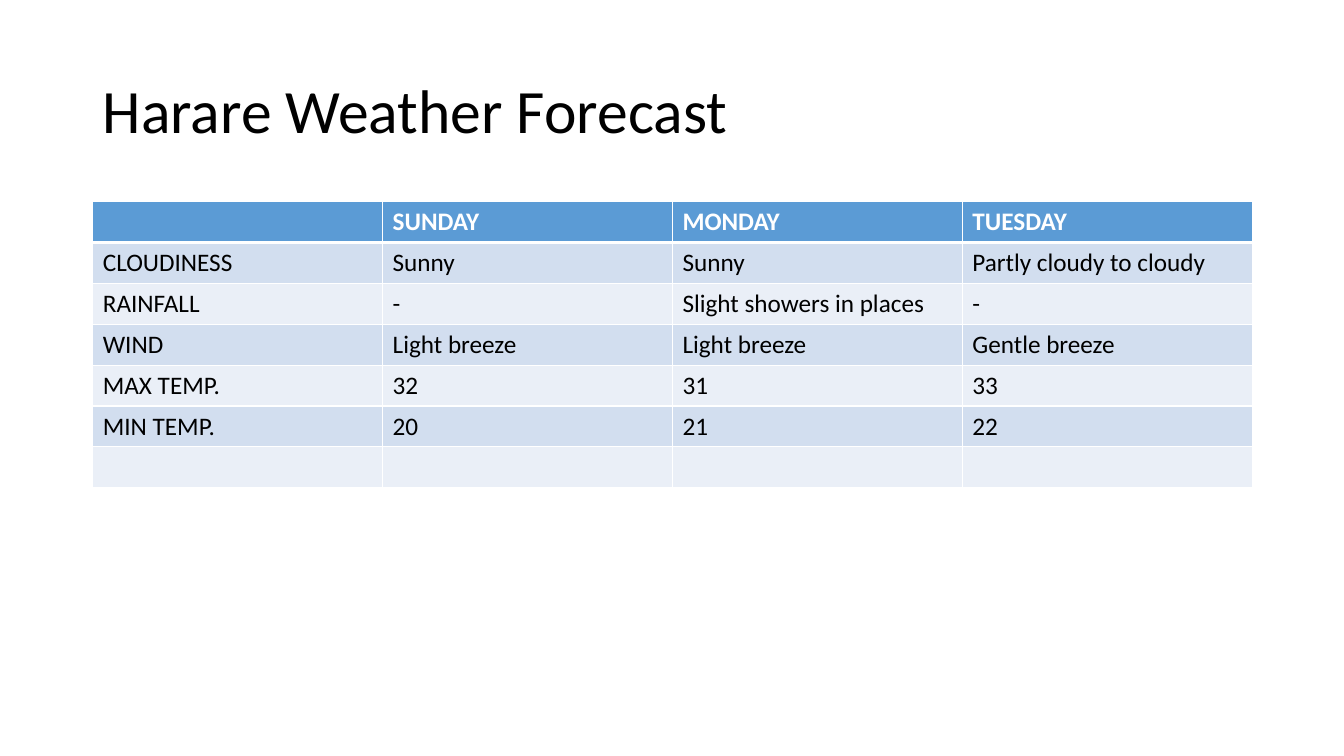
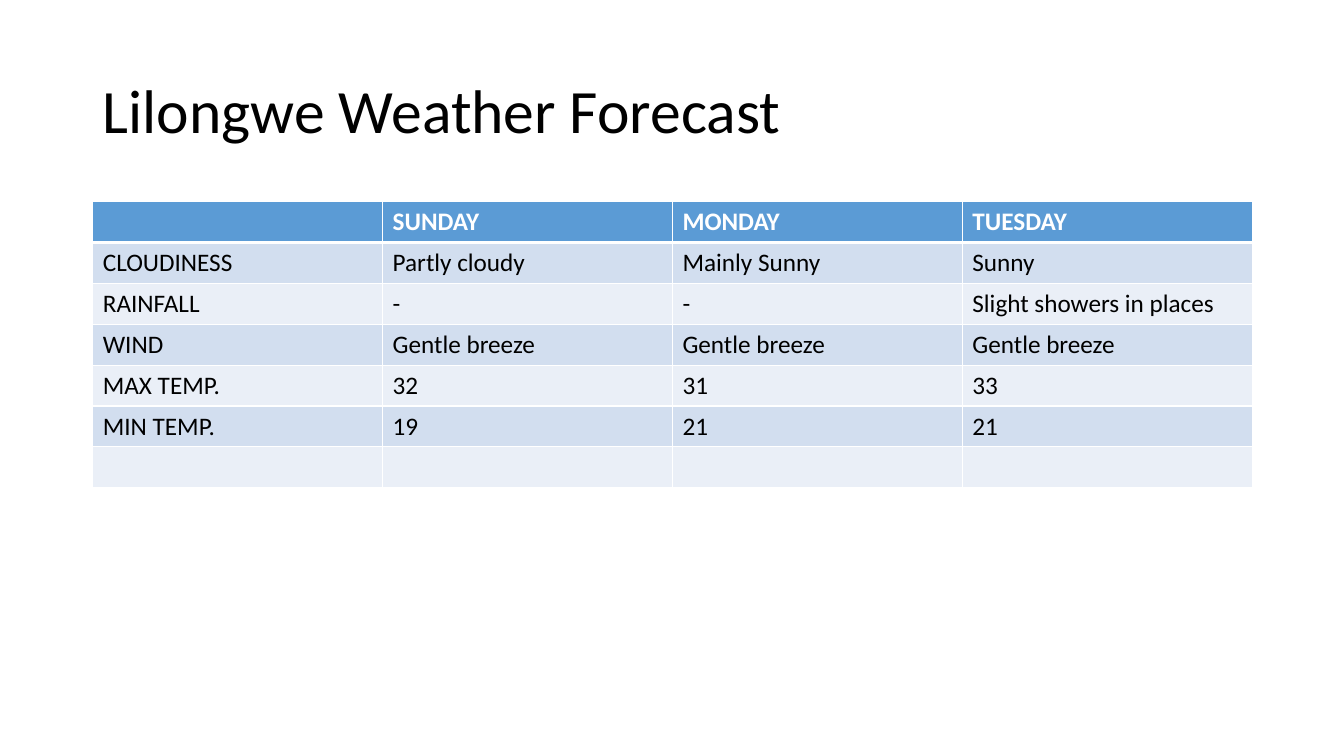
from dataclasses import dataclass

from lxml import etree
from pptx import Presentation
from pptx import util as u
from pptx.dml.color import RGBColor
from pptx.enum import text
from pptx.oxml import ns

PX = 9144  # EMU per px, 100 px to the inch
TITLE_ONLY = 5


@dataclass(frozen=True)
class Theme:
    font: str = "Calibri"
    title_size: int = 44
    table_size: int = 18
    ink: str = "000000"
    white: str = "FFFFFF"
    header: str = "5B9BD5"
    bands: tuple = ("D2DEEF", "EAEFF7")
    rule: int = 1
    header_rule: int = 3


def px(*lengths):
    return [u.Emu(length * PX) for length in lengths]


def write(frame, words, *, font, size, color, bold=False, spacing=None):
    paragraph = frame.paragraphs[0]
    paragraph.alignment = text.PP_ALIGN.LEFT
    if spacing:
        paragraph.line_spacing = spacing
    run = paragraph.add_run()
    run.text = words
    run.font.name = font
    run.font.size = u.Pt(size)
    run.font.bold = bold
    run.font.color.rgb = RGBColor.from_string(color)


def set_borders(cell, color, **widths):
    """Draw cell borders; widths in points are keyed L, R, T, B in that order."""
    properties = cell._tc.get_or_add_tcPr()
    for side, width in widths.items():
        line = etree.SubElement(properties, ns.qn(f"a:ln{side}"), w=str(u.Pt(width)))
        fill = etree.SubElement(line, ns.qn("a:solidFill"))
        etree.SubElement(fill, ns.qn("a:srgbClr"), val=color)


class Deck:
    def __init__(self, theme):
        self.theme = theme
        self.presentation = Presentation()
        self.presentation.slide_width, self.presentation.slide_height = px(1333, 750)
        self.slide = None

    def add_slide(self, title):
        layout = self.presentation.slide_layouts[TITLE_ONLY]
        self.slide = self.presentation.slides.add_slide(layout)
        shape = self.slide.shapes.title
        shape.left, shape.top, shape.width, shape.height = px(92, 40, 1150, 145)
        frame = shape.text_frame
        frame.auto_size = text.MSO_AUTO_SIZE.NONE
        frame.vertical_anchor = text.MSO_ANCHOR.MIDDLE
        write(frame, title, font=self.theme.font, size=self.theme.title_size,
              color=self.theme.ink, spacing=0.9)

    def add_table(self, rows, left, top, width, height):
        """Add a banded table with equal rows and columns under a header row."""
        theme = self.theme
        table = self.slide.shapes.add_table(
            len(rows), len(rows[0]), *px(left, top, width, height)).table
        for i, row in enumerate(rows):
            is_header = i == 0
            fill = theme.header if is_header else theme.bands[(i - 1) % 2]
            above = theme.header_rule if i == 1 else theme.rule
            below = theme.header_rule if is_header else theme.rule
            for j, words in enumerate(row):
                cell = table.cell(i, j)
                set_borders(cell, theme.white, L=theme.rule, R=theme.rule,
                            T=above, B=below)
                cell.fill.solid()
                cell.fill.fore_color.rgb = RGBColor.from_string(fill)
                if words:
                    write(cell.text_frame, words, font=theme.font,
                          size=theme.table_size, bold=is_header,
                          color=theme.white if is_header else theme.ink)

    def save(self):
        self.presentation.save("out.pptx")


DAYS = ("", "SUNDAY", "MONDAY", "TUESDAY")
MEASURES = ("CLOUDINESS", "RAINFALL", "WIND", "MAX TEMP.", "MIN TEMP.")
FORECASTS = {
    "Harare": (
        ("Sunny", "Sunny", "Partly cloudy to cloudy"),
        ("-", "Slight showers in places", "-"),
        ("Light breeze", "Light breeze", "Gentle breeze"),
        ("32", "31", "33"),
        ("20", "21", "22"),
    ),
    "Lilongwe": (
        ("Partly cloudy", "Mainly Sunny", "Sunny"),
        ("-", "-", "Slight showers in places"),
        ("Gentle breeze", "Gentle breeze", "Gentle breeze"),
        ("32", "31", "33"),
        ("19", "21", "21"),
    ),
}


def main():
    deck = Deck(Theme())
    for city, forecast in FORECASTS.items():
        deck.add_slide(f"{city} Weather Forecast")
        body = [(measure, *values) for measure, values in zip(MEASURES, forecast)]
        spare_row = ("",) * len(DAYS)
        deck.add_table([DAYS, *body, spare_row], 92, 200, 1150, 284)
    deck.save()


if __name__ == "__main__":
    main()
